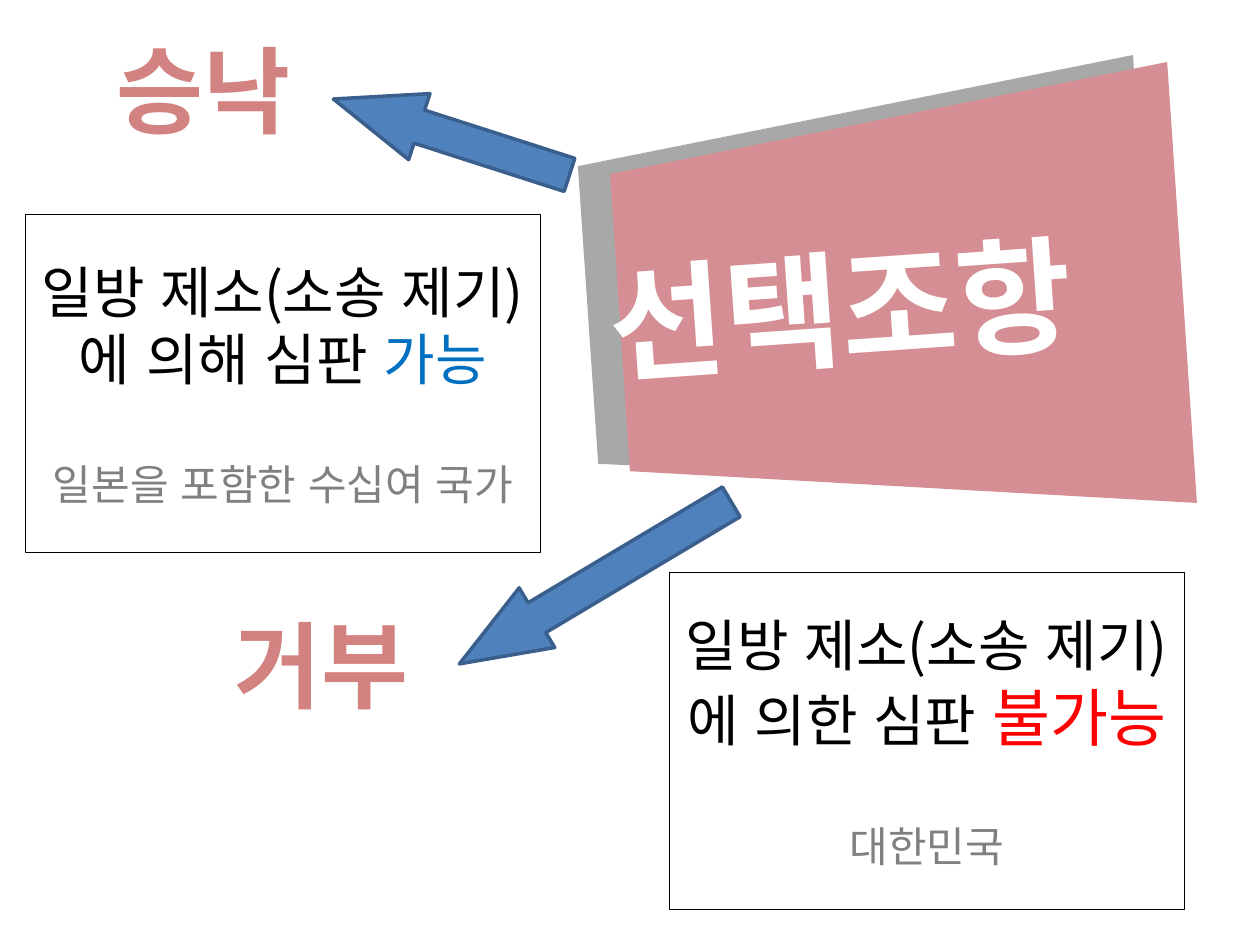
from lxml import etree
from pptx import Presentation
from pptx.dml.color import RGBColor
from pptx.enum.lang import MSO_LANGUAGE_ID
from pptx.enum.shapes import MSO_SHAPE
from pptx.enum.text import MSO_ANCHOR, MSO_AUTO_SIZE, PP_ALIGN
from pptx.oxml.ns import qn
from pptx.util import Cm, Pt

RIGHT_ARROW = MSO_SHAPE.RIGHT_ARROW
RECTANGLE = MSO_SHAPE.RECTANGLE
CENTER = PP_ALIGN.CENTER
MIDDLE = MSO_ANCHOR.MIDDLE
NO_RESIZE = MSO_AUTO_SIZE.NONE
KOREAN = MSO_LANGUAGE_ID.KOREAN

FONT = "Noto Sans CJK KR"
WHITE = RGBColor(0xFF, 0xFF, 0xFF)
BLACK = RGBColor(0, 0, 0)
PINK = RGBColor(0xD5, 0x8E, 0x94)
SIDE_GRAY = RGBColor(0xA8, 0xA8, 0xA8)
ROSE = RGBColor(0xD2, 0x82, 0x80)
ARROW_BLUE = RGBColor(0x4F, 0x81, 0xBD)
ARROW_EDGE = RGBColor(0x3A, 0x5F, 0x8C)
POSSIBLE_BLUE = RGBColor(0x00, 0x70, 0xC0)
IMPOSSIBLE_RED = RGBColor(0xFF, 0, 0)
NOTE_GRAY = RGBColor(0x80, 0x80, 0x80)


def add_text(para, text, size=32, color=BLACK, bold=False):
    para.alignment = CENTER
    span = para.add_run()
    span.text = text
    font = span.font
    font.size = Pt(size)
    font.bold = bold
    font.color.rgb = color
    font.name = FONT
    font.language_id = KOREAN
    east_asian = etree.SubElement(span._r.get_or_add_rPr(), qn("a:ea"))
    east_asian.set("typeface", FONT)


def add_panel_face(page, corners, color):
    points = [(Cm(x), Cm(y)) for x, y in corners]
    builder = page.shapes.build_freeform(*points[0], scale=1.0)
    builder.add_line_segments(points[1:], close=True)
    face = builder.convert_to_shape()
    face.shadow.inherit = False
    face.fill.solid()
    face.fill.fore_color.rgb = color
    face.line.fill.background()


def set_panel_title(page, text):
    title = page.shapes.title
    title.left, title.top = Cm(10.34), Cm(2.67)
    title.width, title.height = Cm(13.21), Cm(7.01)
    title.rotation = -4
    frame = title.text_frame
    frame.auto_size = NO_RESIZE
    frame.vertical_anchor = MIDDLE
    add_text(frame.paragraphs[0], text, size=72, color=WHITE, bold=True)
    page.shapes.element.append(title.element)


def add_arrow(page, left, top, width, angle):
    arrow = page.shapes.add_shape(RIGHT_ARROW, Cm(left), Cm(top), Cm(width), Cm(1.4))
    arrow.shadow.inherit = False
    arrow.rotation = angle
    arrow.adjustments[0] = 0.5
    arrow.adjustments[1] = 1.3
    arrow.fill.solid()
    arrow.fill.fore_color.rgb = ARROW_BLUE
    arrow.line.color.rgb = ARROW_EDGE
    arrow.line.width = Pt(2)


def add_label(page, text, left, top):
    label = page.shapes.add_textbox(Cm(left), Cm(top), Cm(4.37), Cm(2.57))
    label.text_frame.word_wrap = False
    add_text(label.text_frame.paragraphs[0], text, size=54, color=ROSE, bold=True)


def add_outcome_box(page, left, top, lead, verdict, verdict_format, countries):
    box = page.shapes.add_shape(RECTANGLE, Cm(left), Cm(top), Cm(10.39), Cm(6.81))
    box.shadow.inherit = False
    box.fill.background()
    box.line.color.rgb = BLACK
    box.line.width = Pt(0.25)
    frame = box.text_frame
    frame.word_wrap = True
    frame.vertical_anchor = MIDDLE
    statement = frame.paragraphs[0]
    add_text(statement, lead)
    add_text(statement, verdict, **verdict_format)
    note = frame.add_paragraph()
    note.space_before = Pt(38)
    add_text(note, countries, size=24, color=NOTE_GRAY)


def main():
    deck = Presentation()
    deck.slide_width, deck.slide_height = Cm(25.4), Cm(19.05)
    page = deck.slides.add_slide(deck.slide_layouts[5])

    add_panel_face(
        page, [(11.65, 3.35), (22.84, 1.11), (23.4, 9.9), (12.06, 9.35)], SIDE_GRAY
    )
    add_panel_face(
        page, [(12.3, 3.51), (23.53, 1.25), (24.13, 10.14), (12.7, 9.5)], PINK
    )
    set_panel_title(page, "선택조항")

    add_arrow(page, 8.81, 11.05, 6.38, 149.2)
    add_arrow(page, 6.6, 2.06, 5, 197.8)
    add_label(page, "승낙", 1.91, 0.53)
    add_label(page, "거부", 4.29, 12.12)

    add_outcome_box(
        page, 0.51, 4.32, "일방 제소(소송 제기)에 의해 심판 ", "가능",
        {"color": POSSIBLE_BLUE}, "일본을 포함한 수십여 국가",
    )
    add_outcome_box(
        page, 13.49, 11.53, "일방 제소(소송 제기)에 의한 심판 ", "불가능",
        {"size": 36, "color": IMPOSSIBLE_RED}, "대한민국",
    )
    deck.save("out.pptx")


if __name__ == "__main__":
    main()
